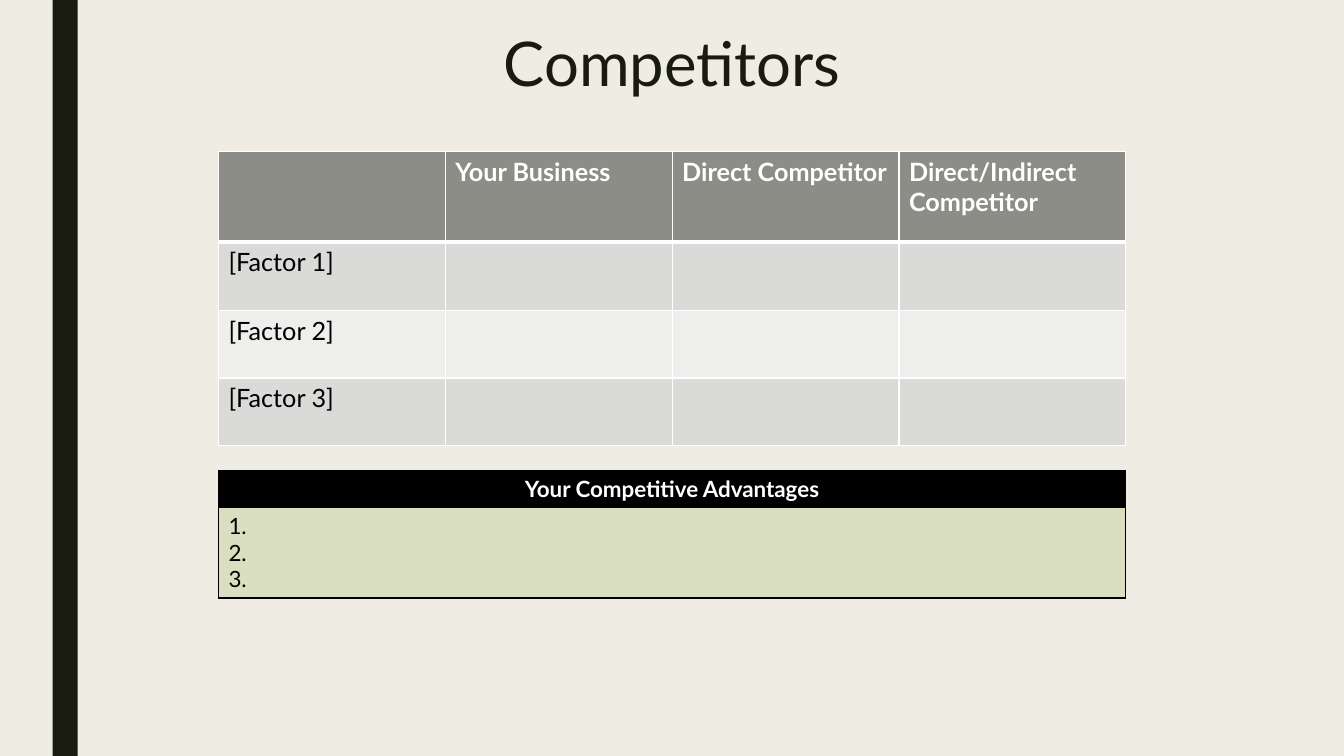
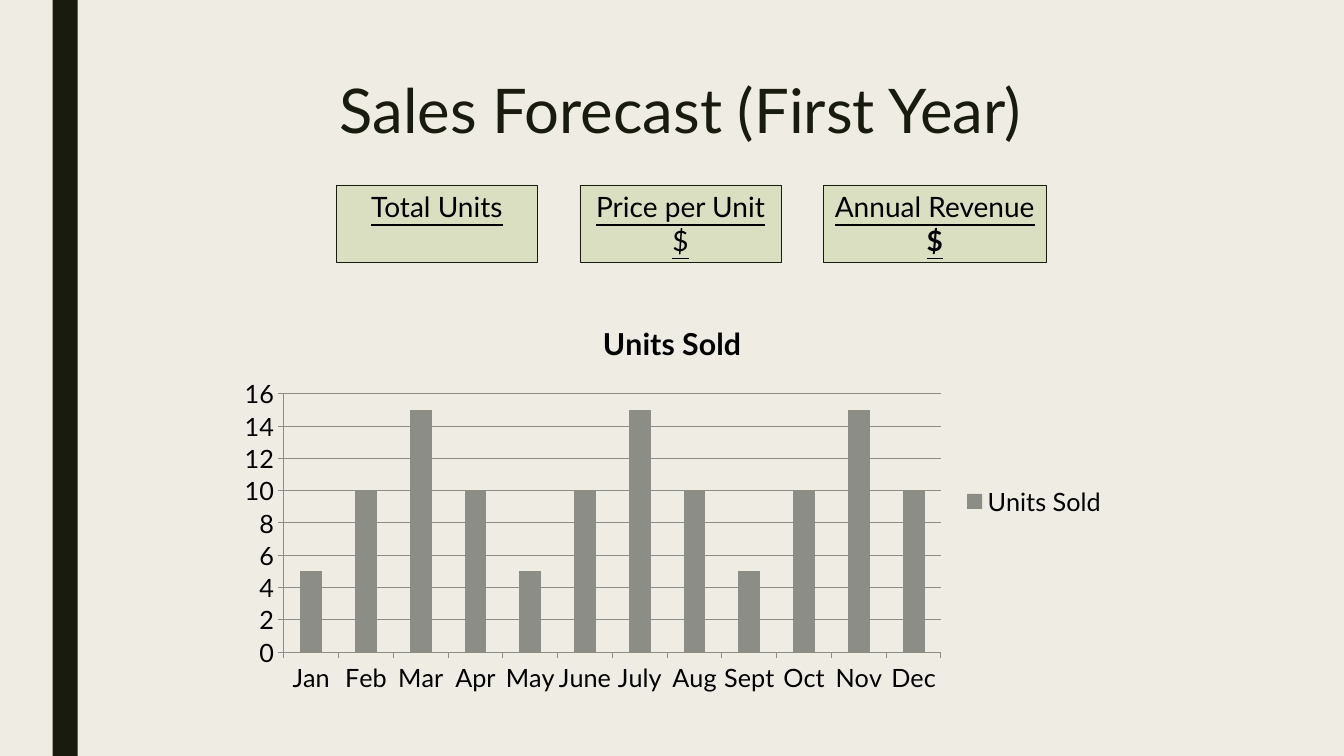
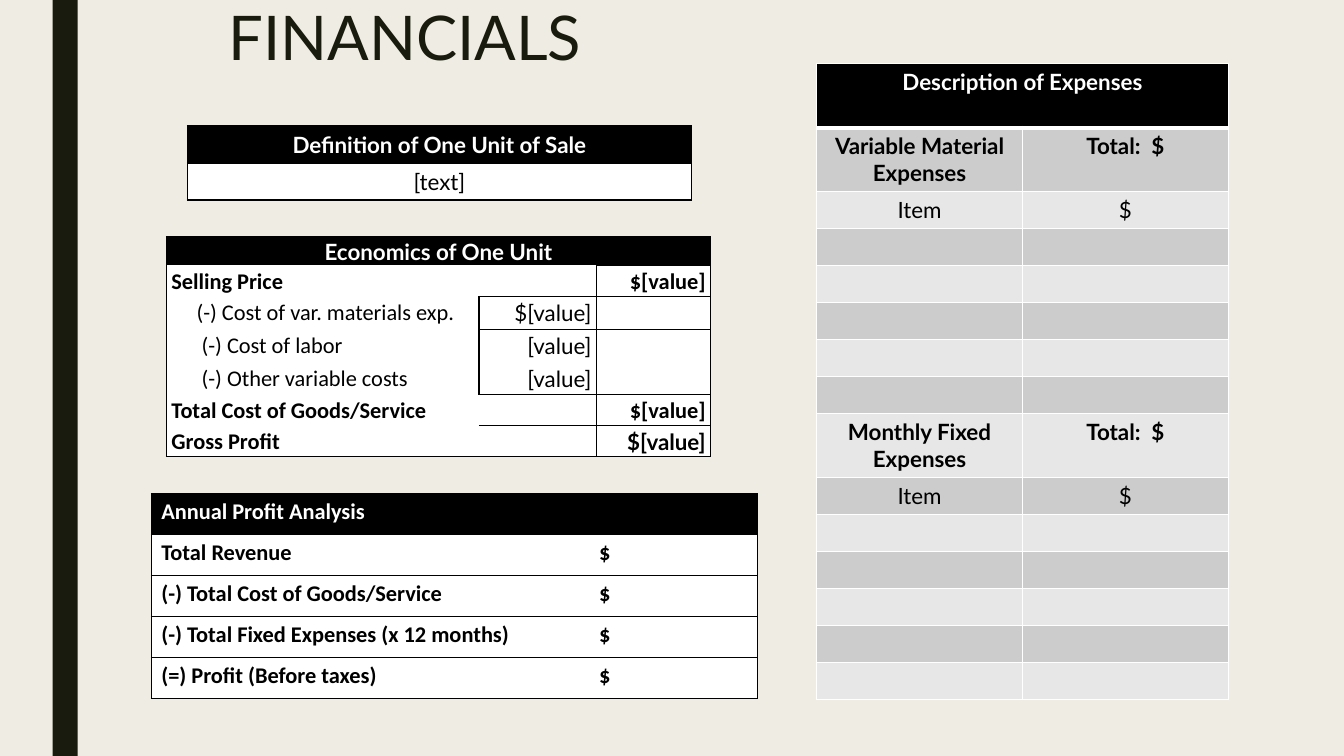
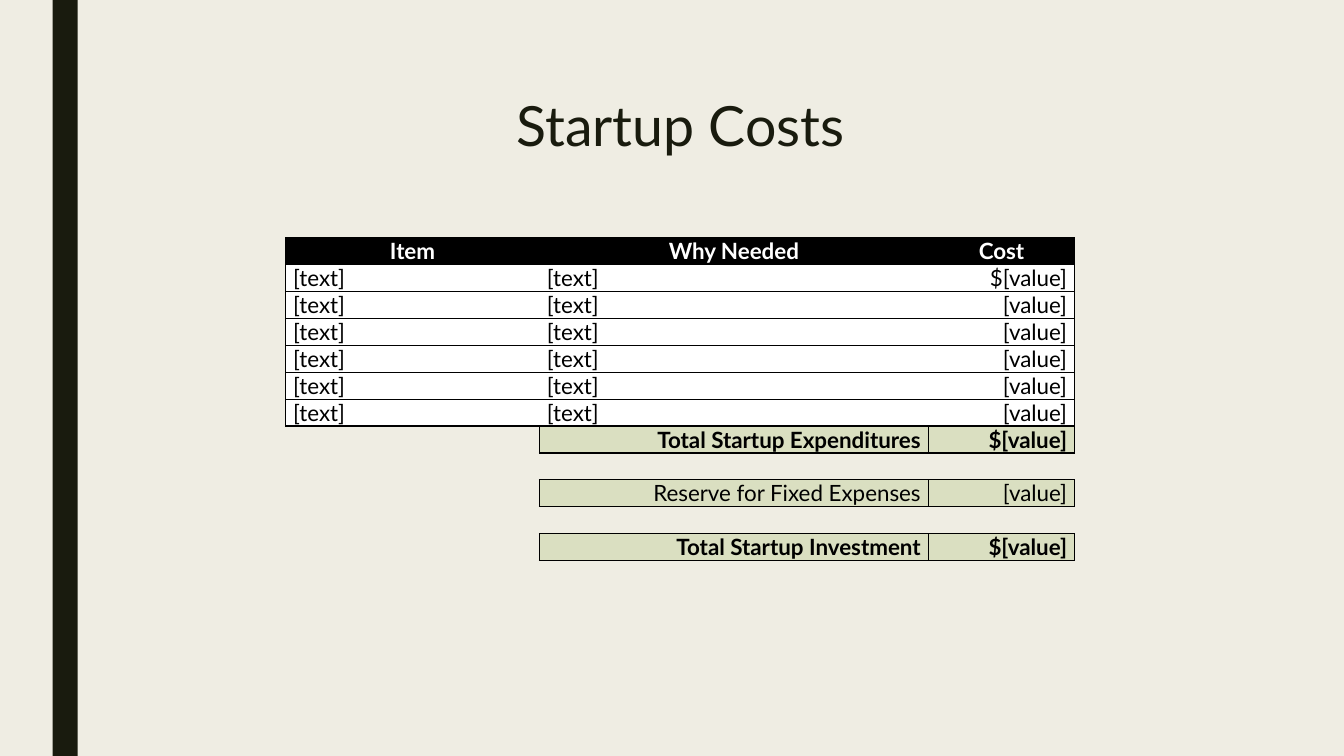
import dataclasses

import lxml.etree
import pptx
import pptx.chart.data
import pptx.dml.color
import pptx.enum.chart
import pptx.enum.shapes
import pptx.enum.text
import pptx.oxml.ns
import pptx.util


@dataclasses.dataclass(frozen=True)
class Theme:
    paper: str = "EFEDE3"
    ink: str = "191B0E"
    black: str = "000000"
    white: str = "FFFFFF"
    gray: str = "8C8D86"
    sage: str = "DADFC1"
    factor_bands: tuple = ("EEEEED", "DADBD9")
    expense_bands: tuple = ("E7E7E7", "CCCCCC")
    font: str = "Lato"
    ledger_font: str = "Calibri"
    title: float = 44
    small_title: float = 39.6
    chart_title: float = 21.6
    box: float = 20
    large: float = 18
    body: float = 16


theme = Theme()
rgb = pptx.dml.color.RGBColor.from_string
qn = pptx.oxml.ns.qn
LEFT, CENTER, RIGHT = (getattr(pptx.enum.text.PP_ALIGN, name) for name in ("LEFT", "CENTER", "RIGHT"))
TOP, MIDDLE = pptx.enum.text.MSO_ANCHOR.TOP, pptx.enum.text.MSO_ANCHOR.MIDDLE
RECTANGLE = pptx.enum.shapes.MSO_SHAPE.RECTANGLE
PLAIN_TABLE = "{2D5ABB26-0587-4C30-8999-92F81FD0307C}"

# Deck on a grid of 160 columns by 90 rows
deck = pptx.Presentation()
deck.slide_width = pptx.util.Inches(13.33)
deck.slide_height = pptx.util.Inches(7.5)
unit = deck.slide_height / 90


def write(frame, text, size=theme.body, color=theme.black, font=theme.font,
          bold=False, underline=False, align=LEFT, spacing=None):
    """Add each line of text to the frame as a paragraph."""
    for line in text.split("\n"):
        para = frame.add_paragraph() if frame.text else frame.paragraphs[0]
        para.alignment = align
        if spacing:
            para.line_spacing = spacing
        if not line:  # an empty table cell still sets its row's least height
            para._p.get_or_add_endParaRPr().set("sz", str(size * 100))
            continue
        span = para.add_run()
        span.text = line
        span.font.size = pptx.util.Pt(size)
        span.font.name = font
        span.font.bold = bold
        span.font.underline = underline
        span.font.color.rgb = rgb(color)


def lay_table(page, left, top, columns, rows, entries, margins=(1.2, 0.6, 1.2, 0.6),
              line=theme.black, weight=1, anchor=TOP, **common):
    """Place a table; every entry is a dict of cell options on top of the common ones."""
    area = [pptx.util.Emu(n * unit) for n in (left, top, sum(columns), sum(rows))]
    table = page.shapes.add_table(len(rows), len(columns), *area).table
    table._tbl.tblPr.find(qn("a:tableStyleId")).text = PLAIN_TABLE
    for column, width in zip(table.columns, columns):
        column.width = pptx.util.Emu(width * unit)
    for row, height in zip(table.rows, rows):
        row.height = pptx.util.Emu(height * unit)
    for r, row_entries in enumerate(entries):
        for c, entry in enumerate(row_entries):
            style = {**common, **entry}
            cell = table.cell(r, c)
            indent = style.pop("indent", 0)
            sides = [pptx.util.Emu(n * unit) for n in (margins[0] + indent, *margins[1:])]
            cell.margin_left, cell.margin_top, cell.margin_right, cell.margin_bottom = sides
            cell.vertical_anchor = anchor
            edges, heavy = style.pop("edges", ""), style.pop("heavy", "")
            for side in "LRTB":
                if side in edges:
                    width = pptx.util.Pt(3 if side in heavy else weight)
                    border = lxml.etree.SubElement(cell._tc.get_or_add_tcPr(), qn("a:ln" + side), w=str(width))
                    solid = lxml.etree.SubElement(border, qn("a:solidFill"))
                    lxml.etree.SubElement(solid, qn("a:srgbClr"), val=line)
            fill = style.pop("fill", None)
            if fill:
                cell.fill.solid()
                cell.fill.fore_color.rgb = rgb(fill)
            else:
                cell.fill.background()
            merged = style.pop("merged", 1)
            write(cell.text_frame, style.pop("text", ""), **style)
            if merged > 1:
                cell.merge(table.cell(r, c + merged - 1))


# Shared background, side band and titles
background = deck.slide_master.background.fill
background.solid()
background.fore_color.rgb = rgb(theme.paper)
titles = [
    ("Competitors", (17, 3.4, 126, 13.7), CENTER, theme.title),
    ("Sales Forecast (First Year)", (18, 9, 126, 13), CENTER, theme.title),
    ("FINANCIALS", (26, 0.4, 108, 15), LEFT, theme.title),
    ("Startup Costs", (18, 11.2, 126, 9), CENTER, theme.small_title),
]
pages = []
for text, area, align, size in titles:
    page = deck.slides.add_slide(deck.slide_layouts[6])
    band = page.shapes.add_shape(RECTANGLE, *(pptx.util.Emu(n * unit) for n in (6.25, 0, 3, 90)))
    band.shadow.inherit = False
    band.fill.solid()
    band.fill.fore_color.rgb = rgb(theme.ink)
    band.line.fill.background()
    box = page.shapes.add_textbox(*(pptx.util.Emu(n * unit) for n in area))
    box.text_frame.word_wrap = True
    write(box.text_frame, text, size=size, color=theme.ink, align=align, spacing=0.89)
    pages.append(page)
competitors, forecast, financials, startup = pages

# Cell styles used by several tables
header = dict(fill=theme.black, color=theme.white, bold=True, align=CENTER)
blank = {}

# Competitors: comparison by factor
heads = ["", "Your Business", "Direct Competitor", "Direct/Indirect Competitor"]
entries = [[dict(text=head, fill=theme.gray, color=theme.white, bold=True, edges="LRTB", heavy="B")
            for head in heads]]
for n in (1, 2, 3):
    entries.append([dict(text=text, fill=theme.factor_bands[n % 2]) for text in (f"[Factor {n}]", "", "", "")])
lay_table(competitors, 26, 18, [27] * 4, [10.8, 8.2, 8, 8], entries,
          line=theme.white, size=theme.large, edges="LRB")

# Competitors: advantages
lay_table(competitors, 26, 56, [108], [4.4, 10.8],
          [[dict(header, text="Your Competitive Advantages")], [dict(text="1.\n2.\n3.", fill=theme.sage)]],
          edges="LRTB")

# Sales forecast: key figures
figures = [("Total Units", "", 40, 24), ("Price per Unit", "$", 69, 24), ("Annual Revenue", "$", 98, 26.5)]
for label, value, left, width in figures:
    box = forecast.shapes.add_shape(RECTANGLE, *(pptx.util.Emu(n * unit) for n in (left, 22, width, 9.25)))
    box.shadow.inherit = False
    box.fill.solid()
    box.fill.fore_color.rgb = rgb(theme.sage)
    box.line.color.rgb = rgb(theme.ink)
    box.line.width = pptx.util.Pt(0.25)
    box.text_frame.word_wrap = True
    box.text_frame.vertical_anchor = TOP
    write(box.text_frame, label, size=theme.box, underline=True, align=CENTER)
    if value:
        write(box.text_frame, value, size=theme.box, underline=True, align=CENTER,
              bold=label == "Annual Revenue")

# Sales forecast: monthly units
data = pptx.chart.data.CategoryChartData()
data.categories = ["Jan", "Feb", "Mar", "Apr", "May", "June", "July", "Aug", "Sept", "Oct", "Nov", "Dec"]
data.add_series("Units Sold", [5, 10, 15, 10] * 3)
chart = forecast.shapes.add_chart(pptx.enum.chart.XL_CHART_TYPE.COLUMN_CLUSTERED,
                                  *(pptx.util.Emu(n * unit) for n in (27, 36, 106, 47.4)), data).chart
chart.font.size = pptx.util.Pt(theme.large)
chart.font.name = theme.font
chart.font.color.rgb = rgb(theme.black)
chart.has_title = True
write(chart.chart_title.text_frame, "Units Sold", size=theme.chart_title, bold=True, align=CENTER)
chart.has_legend = True
chart.legend.position = pptx.enum.chart.XL_LEGEND_POSITION.RIGHT
chart.legend.include_in_layout = False
plot = chart.plots[0]
plot.gap_width = 150
plot.vary_by_categories = False
plot.series[0].format.fill.solid()
plot.series[0].format.fill.fore_color.rgb = rgb(theme.gray)
chart.value_axis.has_major_gridlines = True
for part in (chart.value_axis, chart.category_axis, chart.value_axis.major_gridlines):
    part.format.line.color.rgb = rgb(theme.gray)
    part.format.line.width = pptx.util.Pt(0.75)

# Financials: expenses, two groups of items under one heading
entries = [[dict(header, text="Description of Expenses", merged=2, heavy="B", edges="LRTB"), blank]]
for group, spare_rows in (("Variable Material Expenses", 5), ("Monthly Fixed Expenses", 5)):
    entries.append([dict(text=text, bold=True) for text in (group, "Total:  $")])
    entries.append([dict(text=text) for text in ("Item", "$")])
    entries += [[blank, blank] for _ in range(spare_rows)]
for r, row_entries in enumerate(entries[1:], 1):
    entries[r] = [dict(entry, fill=theme.expense_bands[r % 2]) for entry in row_entries]
heights = [7.6 if r in (0, 1, 8) else 4.4 for r in range(len(entries))]
lay_table(financials, 97.2, 7.6, [24.5] * 2, heights, entries,
          line=theme.white, align=CENTER, edges="LRB")

# Financials: economics of one unit
ledger = dict(font=theme.ledger_font)
strong = dict(ledger, bold=True)
amount = dict(align=RIGHT, edges="LRTB")
entries = [
    [dict(header, text="Economics of One Unit", merged=3, edges="LRT"), blank, blank],
    [dict(strong, text="Selling Price", edges="L"), dict(edges="RB"), dict(strong, **amount, text="$[value]")],
]
costs = [("(-) Cost of var. materials exp.", "$[value]", 3, "LRT"),
         ("(-) Cost of labor", "[value]", 3.6, "LR"),
         ("(-) Other variable costs", "[value]", 3.6, "LRB")]
for label, value, indent, edges in costs:
    entries.append([dict(ledger, text=label, indent=indent, edges="L"),
                    dict(text=value, align=RIGHT, edges=edges), dict(edges=edges)])
entries += [
    [dict(strong, text="Total Cost of Goods/Service", edges="L"), dict(edges="RT"),
     dict(strong, **amount, text="$[value]")],
    [dict(strong, text="Gross Profit", edges="LB"), dict(edges="RB"),
     dict(amount, text="$[value]", bold=True)],
]
lay_table(financials, 19.8, 28.2, [37.2, 14, 13.6], [3.4, 3.7, 3.9, 3.8, 4, 3.7, 3.7], entries,
          margins=(0.6, 0.1, 0.6, 0), anchor=MIDDLE, fill=theme.white)

# Financials: unit of sale
lay_table(financials, 22.3, 15, [60], [4.4, 4.4],
          [[dict(header, text="Definition of One Unit of Sale")], [dict(text="[text]", fill=theme.white)]],
          align=CENTER, edges="LRTB")

# Financials: annual profit
entries = [[dict(strong, text="Annual Profit Analysis", fill=theme.black, color=theme.white, edges="LTB"),
            dict(fill=theme.black, edges="RTB")]]
for label in ("Total Revenue", "(-) Total Cost of Goods/Service",
              "(-) Total Fixed Expenses (x 12 months)", "(=) Profit (Before taxes)"):
    entries.append([dict(strong, text=label, edges="LTB"), dict(strong, text="$", edges="RTB")])
lay_table(financials, 18, 58.75, [52.1, 20], [4.88] * 5, entries, weight=0.5, fill=theme.white)

# Startup costs: items, then totals set apart by open rows
entries = [[dict(header, text=text, edges=edges)
            for text, edges in (("Item", "LTB"), ("Why Needed", "TB"), ("Cost", "RTB"))]]
for n in range(6):
    entries.append([dict(text="[text]", fill=theme.white, edges="LTB"),
                    dict(text="[text]", fill=theme.white, edges="TB"),
                    dict(text="[value]" if n else "$[value]", fill=theme.white, align=RIGHT, edges="RTB")])
totals = [("Total Startup Expenditures", "$[value]", True, "LT"),
          ("Reserve for Fixed Expenses", "[value]", False, "LT"),
          ("Total Startup Investment", "$[value]", True, "LTB")]
for n, (label, value, bold, edges) in enumerate(totals):
    if n:
        entries.append([dict(merged=2), blank, blank])
    total = dict(fill=theme.sage, bold=bold, align=RIGHT)
    entries.append([blank, dict(total, text=label, edges=edges), dict(total, text=value, edges="RTB")])
lay_table(startup, 34, 28.3, [30.2, 46.3, 17.4], [3.2] * len(entries), entries, margins=(0.9, 0, 0.9, 0))

deck.save("out.pptx")
